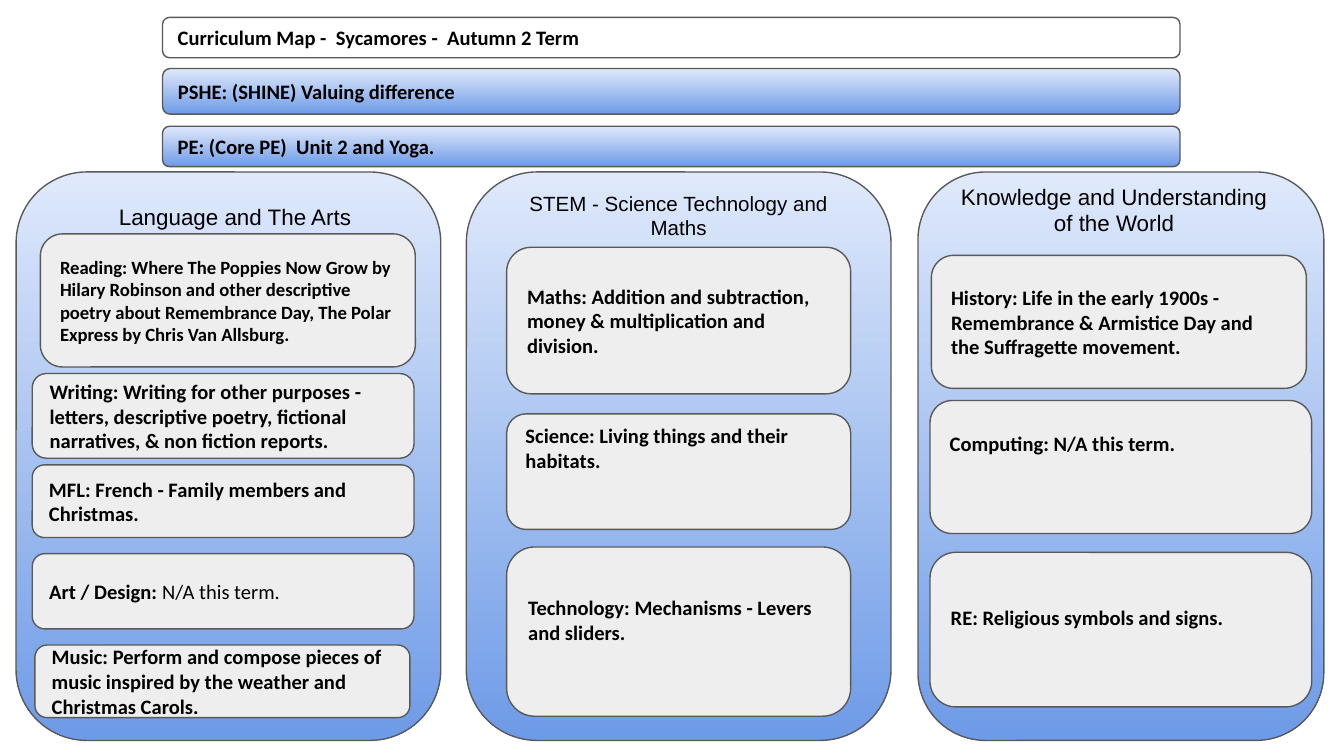
from pptx import Presentation
from pptx.dml.color import RGBColor
from pptx.enum.shapes import MSO_SHAPE
from pptx.enum.text import MSO_ANCHOR, PP_ALIGN
from pptx.util import Emu, Pt

PX = 9144  # 100 px to the inch
INSET = 10
BLUE_TOP, BLUE_BOTTOM = "DFE9FB", "6E9BE7"
GREY, OUTLINE, BLACK = "EEEEEE", "595959", "000000"

# Full-width bars: top, height, text, whether shaded
BARS = [
    (13, 30, "Curriculum Map -  Sycamores -  Autumn 2 Term", False),
    (51, 34, "PSHE: (SHINE) Valuing difference", True),
    (94, 30, "PE: (Core PE)  Unit 2 and Yoga.", True),
]

# Columns: left, width
COLUMNS = [(12, 316), (347, 316), (683, 302)]

# Headings: left, top, height, size, text
HEADINGS = [
    (47, 141, 34, 12, "Language and The Arts"),
    (377, 132, 30, 11, "STEM - Science Technology and Maths"),
    (701, 126, 63, 12, "Knowledge and Understanding of the World"),
]

# Subjects: left, top, width, height, bold text, then options
SUBJECTS = [
    (30, 174, 279, 99, "Reading: Where The Poppies Now Grow by Hilary Robinson and other "
     "descriptive poetry about Remembrance Day, The Polar Express by Chris Van Allsburg.",
     {"size": 10}),
    (24, 278, 284, 63, "Writing: Writing for other purposes - letters, descriptive poetry, "
     "fictional narratives, & non fiction reports.", {}),
    (24, 346, 284, 54, "MFL: French - Family members and Christmas.", {}),
    (24, 412, 284, 56, "Art / Design:", {"plain": " N/A this term."}),
    (26, 480, 279, 54, "Music: Perform and compose pieces of music inspired by the weather "
     "and Christmas Carols.", {}),
    (377, 184, 256, 109, "Maths: Addition and subtraction, money & multiplication and division.", {}),
    (377, 308, 256, 86, "Science: Living things and their habitats.", {"raise_by": 36}),
    (377, 407, 256, 126, "Technology: Mechanisms - Levers and sliders.", {"raise_by": 18}),
    (693, 190, 279, 99, "History: Life in the early 1900s - Remembrance & Armistice Day and "
     "the Suffragette movement.", {}),
    (692, 298, 284, 99, "Computing: N/A this term.", {"raise_by": 36}),
    (692, 411, 284, 115, "RE: Religious symbols and signs.", {"raise_by": 18}),
]


def px(*lengths):
    return [Emu(length * PX) for length in lengths]


def color(value):
    return RGBColor.from_string(value)


def set_insets(frame, bottom=INSET):
    frame.word_wrap = True
    frame.margin_left = frame.margin_top = frame.margin_right = Emu(INSET * PX)
    frame.margin_bottom = Emu(bottom * PX)


def set_font(font, name, size, bold=False):
    font.name, font.size, font.bold = name, Pt(size), bold
    font.color.rgb = color(BLACK)


def add_panel(slide, left, top, width, height, fill=None):
    """Rounded panel; fill is None, one colour or a (top, bottom) gradient."""
    shape = slide.shapes.add_shape(
        MSO_SHAPE.FLOWCHART_ALTERNATE_PROCESS, *px(left, top, width, height))
    shape.shadow.inherit = False
    shape.line.color.rgb = color(OUTLINE)
    shape.line.width = Pt(0.75)
    if fill is None:
        shape.fill.background()
    elif isinstance(fill, tuple):
        shape.fill.gradient()
        shape.fill.gradient_angle = 270
        for stop, value in zip(shape.fill.gradient_stops, fill):
            stop.color.rgb = color(value)
    else:
        shape.fill.solid()
        shape.fill.fore_color.rgb = color(fill)
    return shape


def add_label(shape, text, size=11, plain="", raise_by=0):
    """Bold text in a panel, with an optional plain ending."""
    frame = shape.text_frame
    set_insets(frame, INSET + raise_by)
    frame.vertical_anchor = MSO_ANCHOR.MIDDLE
    paragraph = frame.paragraphs[0]
    paragraph.alignment = PP_ALIGN.LEFT
    set_font(paragraph.font, "Calibri", size, True)
    paragraph.add_run().text = text
    if plain:
        ending = paragraph.add_run()
        ending.text = plain
        ending.font.bold = False


def add_heading(slide, left, top, height, size, text):
    frame = slide.shapes.add_textbox(*px(left, top, 256, height)).text_frame
    set_insets(frame)
    paragraph = frame.paragraphs[0]
    paragraph.text = text
    paragraph.alignment = PP_ALIGN.CENTER
    set_font(paragraph.font, "Arial", size)


def main():
    presentation = Presentation()
    presentation.slide_width = Emu(1000 * PX)
    presentation.slide_height = Emu(1000 * PX * 9 // 16)
    slide = presentation.slides.add_slide(presentation.slide_layouts[6])
    shading = (BLUE_TOP, BLUE_BOTTOM)

    # Column backgrounds
    for left, width in COLUMNS:
        add_panel(slide, left, 128, width, 423, shading)

    # Subject boxes
    for left, top, width, height, text, options in SUBJECTS:
        add_label(add_panel(slide, left, top, width, height, GREY), text, **options)

    # Column headings
    for heading in HEADINGS:
        add_heading(slide, *heading)

    # Bars across the top
    for top, height, text, shaded in BARS:
        add_label(add_panel(slide, 121, top, 757, height, shading if shaded else None), text)

    presentation.save("out.pptx")


if __name__ == "__main__":
    main()
